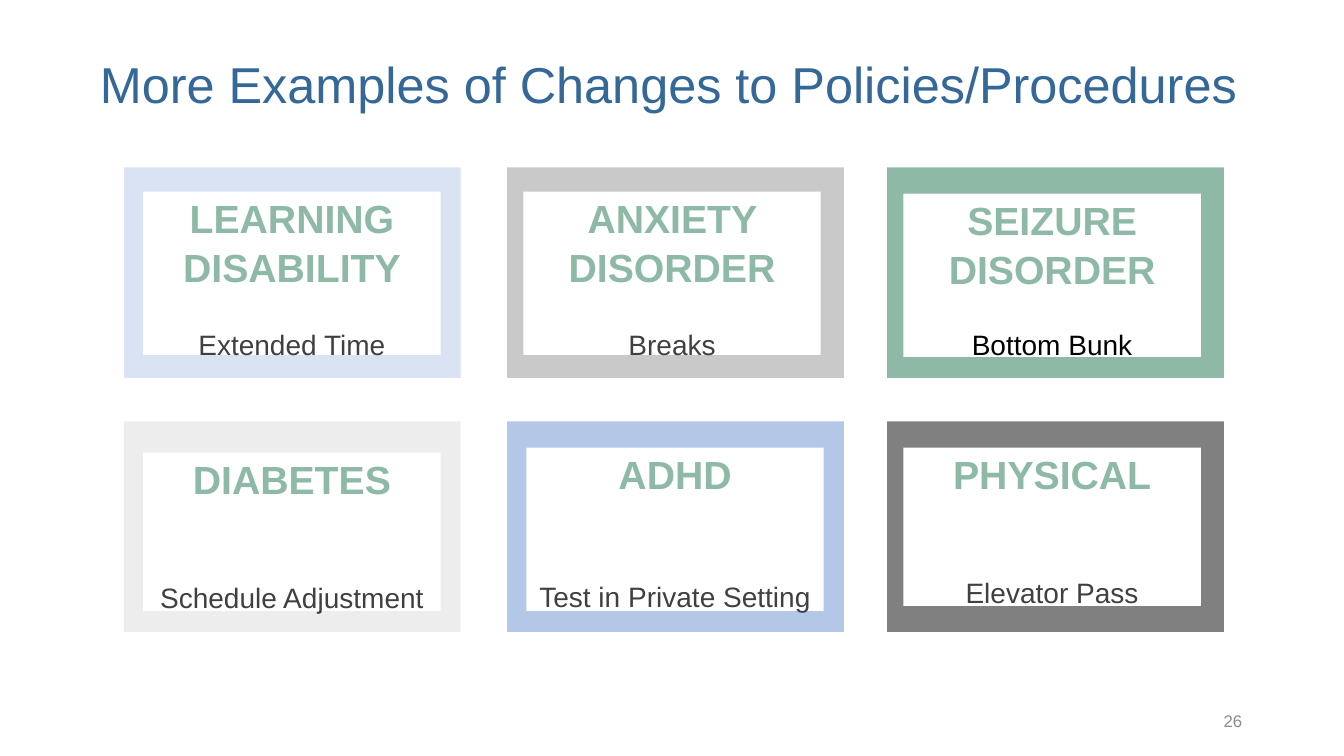
from pptx import Presentation
from pptx.dml.color import RGBColor
from pptx.enum.shapes import MSO_SHAPE
from pptx.enum.text import MSO_ANCHOR, MSO_AUTO_SIZE, PP_ALIGN
from pptx.util import Pt

RECTANGLE = MSO_SHAPE.RECTANGLE
TOP, MIDDLE = MSO_ANCHOR.TOP, MSO_ANCHOR.MIDDLE
LEFT, CENTER, RIGHT = PP_ALIGN.LEFT, PP_ALIGN.CENTER, PP_ALIGN.RIGHT

WHITE = RGBColor(0xFF, 0xFF, 0xFF)
BLACK = RGBColor(0x00, 0x00, 0x00)
CHARCOAL = RGBColor(0x40, 0x40, 0x40)
BLUE = RGBColor(0x34, 0x68, 0x98)
GREEN = RGBColor(0x8D, 0xB9, 0xA6)
PALE_BLUE = RGBColor(0xDA, 0xE3, 0xF3)
SOFT_BLUE = RGBColor(0xB4, 0xC7, 0xE7)
PALE_GRAY = RGBColor(0xED, 0xED, 0xED)
SILVER = RGBColor(0xC9, 0xC9, 0xC9)
GRAY = RGBColor(0x80, 0x80, 0x80)
NUMBER_GRAY = RGBColor(0x8C, 0x8C, 0x8C)

TITLE = "More Examples of Changes to Policies/Procedures"
PAGE_NUMBER = "26"
# condition, change, frame colour, change colour,
# panel (x offset, y offset, height) in px, space above the change in points
CARDS = [
    ("LEARNING DISABILITY", "Extended Time", PALE_BLUE, CHARCOAL, (19, 24, 162), 25),
    ("ANXIETY DISORDER", "Breaks", SILVER, CHARCOAL, (16, 24, 162), 25),
    ("SEIZURE DISORDER", "Bottom Bunk", GREEN, BLACK, (16, 26, 162), 24),
    ("DIABETES", "Schedule Adjustment", PALE_GRAY, CHARCOAL, (19, 31, 157), 55),
    ("ADHD", "Test in Private Setting", SOFT_BLUE, CHARCOAL, (19, 26, 162), 58),
    ("PHYSICAL", "Elevator Pass", GRAY, CHARCOAL, (16, 26, 157), 55),
]

PX = 9144  # EMU, 100 px to the inch
COLUMNS = (123, 503, 880)
ROWS = (166, 418)
FRAME_WIDTH, FRAME_HEIGHT = 334, 209
PANEL_WIDTH = 295


def px(*lengths):
    return [length * PX for length in lengths]


def add_block(slide, box, color):
    block = slide.shapes.add_shape(RECTANGLE, *px(*box))
    block.shadow.inherit = False
    block.fill.solid()
    block.fill.fore_color.rgb = color
    block.line.fill.background()
    return block


def set_up_frame(frame, anchor, margin=0):
    frame.word_wrap = True
    frame.auto_size = MSO_AUTO_SIZE.NONE
    frame.vertical_anchor = anchor
    frame.margin_left = frame.margin_right = margin * PX
    frame.margin_top = frame.margin_bottom = 0


def write(paragraph, text, size, color, align, spacing=1.0, bold=False):
    paragraph.text = text
    paragraph.alignment = align
    paragraph.line_spacing = spacing
    paragraph.font.name = "Arial"
    paragraph.font.size = Pt(size)
    paragraph.font.bold = bold
    paragraph.font.color.rgb = color


def add_card(slide, x, y, card):
    condition, change, frame_color, change_color, panel_box, gap = card
    dx, dy, panel_height = panel_box
    add_block(slide, (x, y, FRAME_WIDTH, FRAME_HEIGHT), frame_color)
    panel = add_block(slide, (x + dx, y + dy, PANEL_WIDTH, panel_height), WHITE)
    text = panel.text_frame
    set_up_frame(text, TOP)
    write(text.paragraphs[0], condition, 28, GREEN, CENTER, 1.05, bold=True)
    change_line = text.add_paragraph()
    write(change_line, change, 20, change_color, CENTER, 1.05)
    change_line.space_before = Pt(gap)


def main():
    deck = Presentation()
    deck.slide_width, deck.slide_height = px(1333, 750)
    slide = deck.slides.add_slide(deck.slide_layouts[5])

    title = slide.shapes.title
    title.left, title.top, title.width, title.height = px(99, 51, 1220, 72)
    set_up_frame(title.text_frame, MIDDLE)
    write(title.text_frame.paragraphs[0], TITLE, 36, BLUE, LEFT, 0.9)

    for index, card in enumerate(CARDS):
        row, column = divmod(index, len(COLUMNS))
        add_card(slide, COLUMNS[column], ROWS[row], card)

    number = slide.shapes.add_textbox(*px(942, 695, 300, 40)).text_frame
    set_up_frame(number, MIDDLE, margin=10)
    write(number.paragraphs[0], PAGE_NUMBER, 12, NUMBER_GRAY, RIGHT)

    deck.save("out.pptx")


if __name__ == "__main__":
    main()
